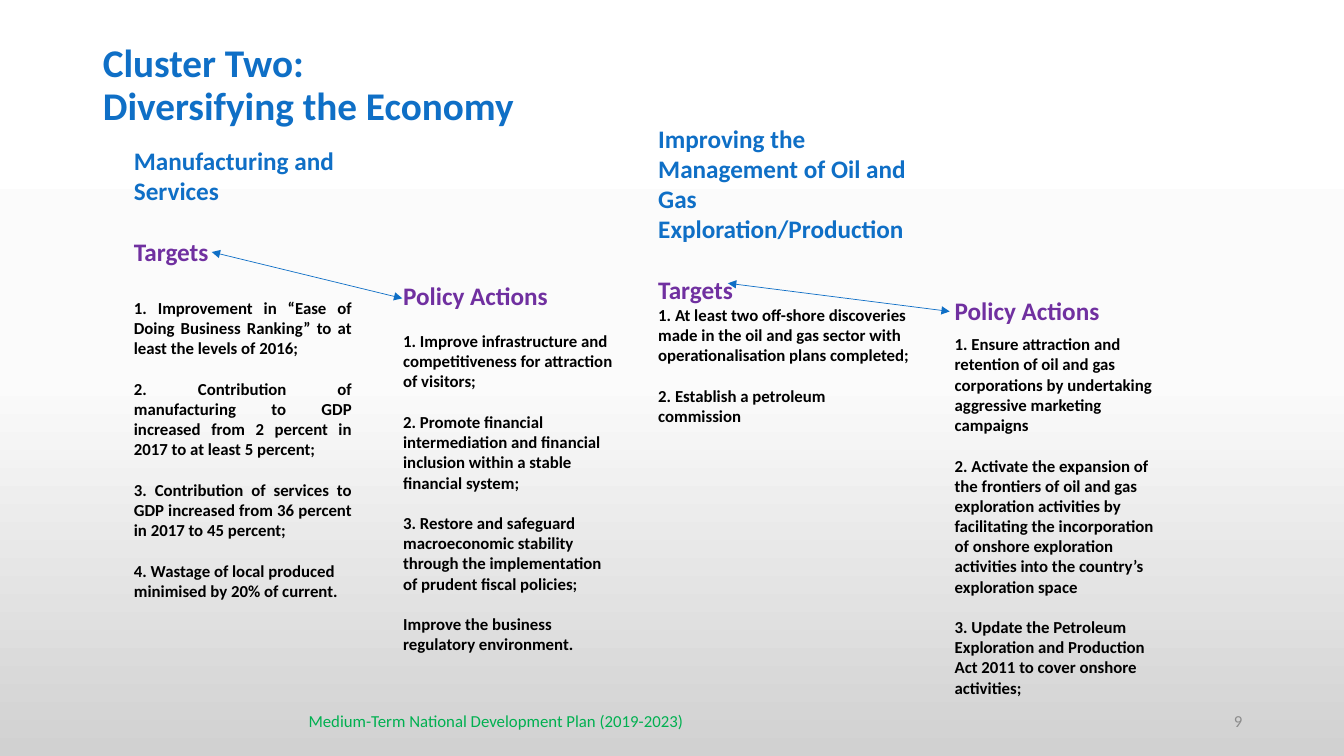
from copy import deepcopy

from pptx import Presentation
from pptx.dml.color import RGBColor
from pptx.enum.shapes import MSO_CONNECTOR
from pptx.enum.text import MSO_ANCHOR, MSO_AUTO_SIZE, PP_ALIGN
from pptx.oxml.ns import qn
from pptx.util import Inches, Pt
from lxml.etree import SubElement

# Content
TITLE = "Cluster Two:\vDiversifying the Economy"
FOOTER = "Medium-Term National Development Plan (2019-2023)"
PAGE_NUMBER = "9"

# Each column: box, then (style, size of the line left open above, text)
COLUMNS = [
    ((1.23, 1.39, 2.36, 4.64), [
        ("theme", 0, "Manufacturing and Services"),
        ("heading", 18, "Targets"),
        ("justified", 18, "1. Improvement in “Ease of Doing Business Ranking” to at least "
                          "the levels of 2016;"),
        ("justified", 12, "2. Contribution of manufacturing to GDP increased from 2 percent "
                          "in 2017 to at least 5 percent;"),
        ("justified", 12, "3. Contribution of services to GDP increased from 36 percent "
                          "in 2017 to 45 percent;"),
        ("item", 12, "4. Wastage of local produced minimised by 20% of current."),
    ]),
    ((3.9, 2.73, 2.28, 4.14), [
        ("heading", 0, "Policy Actions"),
        ("item", 12, "1. Improve infrastructure and competitiveness for attraction of visitors;"),
        ("item", 12, "2. Promote financial intermediation and financial inclusion within "
                     "a stable financial system;"),
        ("item", 12, "3. Restore and safeguard macroeconomic stability through the "
                     "implementation of prudent fiscal policies;"),
        ("item", 12, "Improve the business regulatory environment."),
    ]),
    ((6.43, 1.17, 2.69, 3.74), [
        ("theme", 0, "Improving the Management of Oil and Gas Exploration/Production"),
        ("heading", 18, "Targets"),
        ("item", 0, "1. At least two off-shore discoveries made in the oil and gas sector "
                    "with operationalisation plans completed;"),
        ("item", 12, "2. Establish a petroleum commission"),
    ]),
    ((9.37, 2.88, 2.28, 4.36), [
        ("heading", 0, "Policy Actions"),
        ("item", 5, "1. Ensure attraction and retention of oil and gas corporations by "
                    "undertaking aggressive marketing campaigns"),
        ("item", 12, "2. Activate the expansion of the frontiers of oil and gas exploration "
                     "activities by facilitating the incorporation of onshore exploration "
                     "activities into the country’s exploration space"),
        ("item", 12, "3. Update the Petroleum Exploration and Production Act 2011 to cover "
                     "onshore activities;"),
    ]),
]
ARROWS = [(2.1, 2.5, 3.99, 2.96), (7.22, 2.81, 9.42, 3.09)]

# Look
FONT = "Calibri"
LINE_HEIGHT = 1.22
COLORS = {"blue": "0F6FC6", "purple": "7030A0", "black": "000000",
          "green": "00B050", "gray": "8C8C8C"}
BACKGROUND = [(0, "FFFFFF"), (0.5, "FBFBFB"), (1, "D1D1D1")]
STYLES = {  # size, color, alignment
    "theme": (18, "blue", PP_ALIGN.LEFT),
    "heading": (18, "purple", PP_ALIGN.LEFT),
    "item": (12, "black", PP_ALIGN.LEFT),
    "justified": (12, "black", PP_ALIGN.JUSTIFY),
}


def rgb(name):
    return RGBColor.from_string(COLORS[name])


def format_paragraph(paragraph, size, color, align, bold=True):
    paragraph.alignment = align
    for run in paragraph.runs:
        run.font.name = FONT
        run.font.size = Pt(size)
        run.font.bold = bold
        run.font.color.rgb = rgb(color)


def add_text_frame(slide, box):
    frame = slide.shapes.add_textbox(*map(Inches, box)).text_frame
    frame.word_wrap = True
    return frame


def add_background(slide):
    fill = slide.background.fill
    fill.gradient()
    fill.gradient_angle = 270
    stop_list = slide.element.find(".//" + qn("a:gsLst"))
    stop_list.append(deepcopy(stop_list[-1]))
    for stop, (position, color) in zip(fill.gradient_stops, BACKGROUND):
        stop.position = position
        stop.color.rgb = RGBColor.from_string(color)


def add_title(slide):
    title = slide.shapes.title
    title.left, title.top, title.width, title.height = map(Inches, (0.92, 0.13, 11.5, 1.45))
    frame = title.text_frame
    frame.text = TITLE
    frame.auto_size = MSO_AUTO_SIZE.NONE
    frame.vertical_anchor = MSO_ANCHOR.MIDDLE
    frame.paragraphs[0].line_spacing = 0.9
    format_paragraph(frame.paragraphs[0], 28, "blue", PP_ALIGN.LEFT)


def add_footer(slide, box, text, color, align):
    frame = add_text_frame(slide, box)
    frame.text = text
    frame.vertical_anchor = MSO_ANCHOR.MIDDLE
    format_paragraph(frame.paragraphs[0], 12, color, align, bold=False)


def add_column(slide, box, entries):
    frame = add_text_frame(slide, box)
    frame.auto_size = MSO_AUTO_SIZE.SHAPE_TO_FIT_TEXT
    for index, (style, gap, text) in enumerate(entries):
        paragraph = frame.add_paragraph() if index else frame.paragraphs[0]
        paragraph.text = text
        if gap:
            paragraph.space_before = Pt(gap * LINE_HEIGHT)
        format_paragraph(paragraph, *STYLES[style])


def add_arrow(slide, ends):
    arrow = slide.shapes.add_connector(MSO_CONNECTOR.STRAIGHT, *map(Inches, ends))
    arrow.line.color.rgb = rgb("blue")
    arrow.line.width = Pt(0.5)
    properties = arrow.element.spPr
    for end in ("a:headEnd", "a:tailEnd"):
        SubElement(properties.find(qn("a:ln")), qn(end), type="triangle")
    SubElement(properties, qn("a:effectLst"))


def main():
    deck = Presentation()
    deck.slide_width, deck.slide_height = Inches(13.33), Inches(7.5)
    slide = deck.slides.add_slide(deck.slide_layouts[5])
    add_background(slide)
    add_title(slide)
    add_footer(slide, (0.92, 6.95, 8, 0.4), FOOTER, "green", PP_ALIGN.CENTER)
    add_footer(slide, (9.42, 6.95, 3, 0.4), PAGE_NUMBER, "gray", PP_ALIGN.RIGHT)
    for box, entries in COLUMNS:
        add_column(slide, box, entries)
    for ends in ARROWS:
        add_arrow(slide, ends)
    deck.save("out.pptx")


if __name__ == "__main__":
    main()
